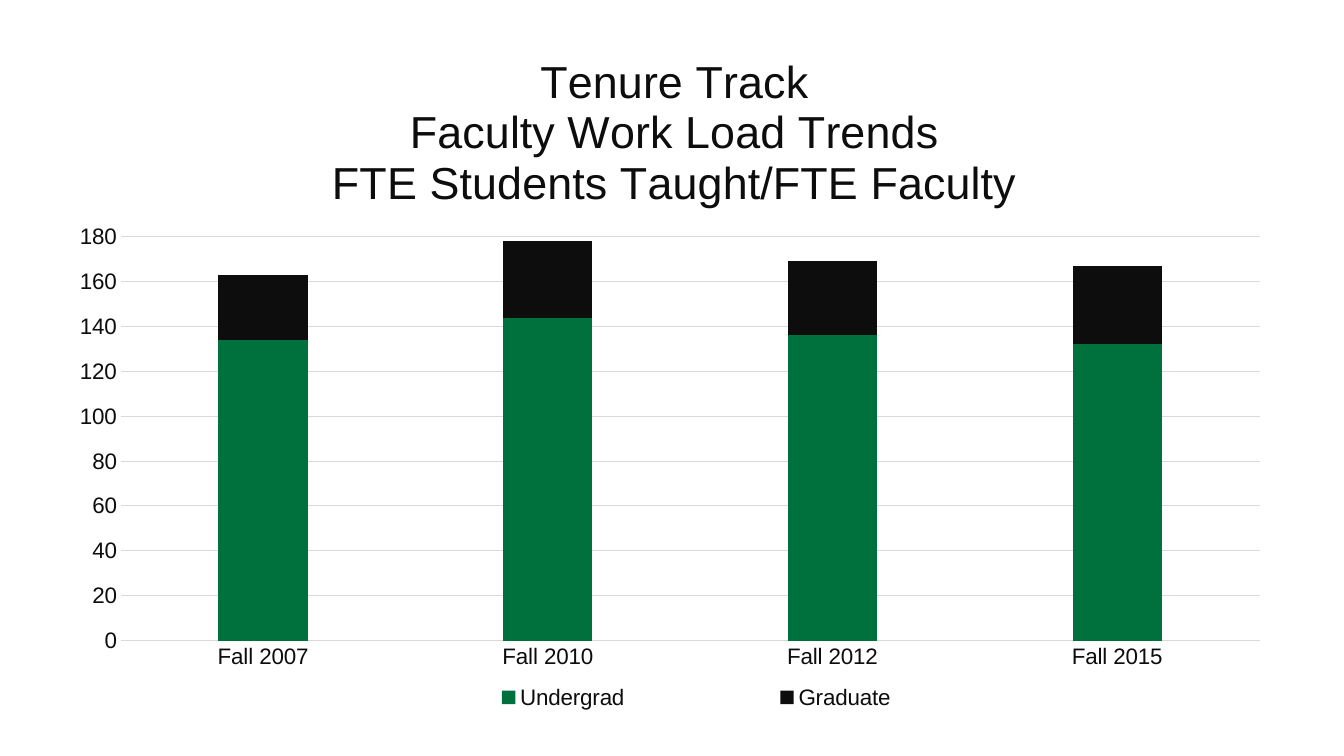
import pptx
import pptx.chart.data
import pptx.dml.color
import pptx.enum.chart
import pptx.oxml
import pptx.oxml.ns
import pptx.util

Cm = pptx.util.Cm
Pt = pptx.util.Pt
RGBColor = pptx.dml.color.RGBColor
qn = pptx.oxml.ns.qn

INK = RGBColor(0x0D, 0x0D, 0x0D)
GREEN = RGBColor(0x00, 0x70, 0x3C)
GRID = RGBColor(0xD9, 0xD9, 0xD9)

TITLE = ["Tenure Track", "Faculty Work Load Trends",
         "FTE Students Taught/FTE Faculty"]
TERMS = ["Fall 2007", "Fall 2010", "Fall 2012", "Fall 2015"]
LOADS = [("Undergrad", (134, 144, 136, 132), GREEN),
         ("Graduate", (29, 34, 33, 35), INK)]


class Deck:
    """Holds the style and the current slide."""
    font = "Arial"
    title_size = Pt(32)
    label_size = Pt(16)
    line_width = Pt(0.75)

    def __init__(self):
        self.prs = pptx.Presentation()
        self.prs.slide_width = Cm(33.87)
        self.prs.slide_height = Cm(19.05)
        self.s = self.prs.slides.add_slide(self.prs.slide_layouts[6])

    def style_font(self, font, size):
        font.name = self.font
        font.size = size
        font.bold = False
        font.color.rgb = INK

    def style_line(self, line):
        line.color.rgb = GRID
        line.width = self.line_width

    def place(self, parent, index, **fractions):
        """Set the manual layout of a chart part, in fractions of the chart."""
        layout = parent.find(qn("c:layout"))
        if layout is not None:
            index = parent.index(layout)
            parent.remove(layout)
        target = '<c:layoutTarget val="inner"/>' if parent.tag == qn("c:plotArea") else ""
        modes = "".join(f'<c:{k}Mode val="edge"/>' for k in "xy")
        values = "".join(f'<c:{k} val="{v}"/>' for k, v in fractions.items())
        parent.insert(index, pptx.oxml.parse_xml(
            f'<c:layout {pptx.oxml.ns.nsdecls("c")}><c:manualLayout>'
            f'{target}{modes}{values}</c:manualLayout></c:layout>'))

    def stacked_chart(self, left, top, width, height, categories, series):
        data = pptx.chart.data.CategoryChartData()
        data.categories = categories
        for name, values, _ in series:
            data.add_series(name, values)
        chart = self.s.shapes.add_chart(
            pptx.enum.chart.XL_CHART_TYPE.COLUMN_STACKED,
            left, top, width, height, data).chart
        self.style_font(chart.font, self.label_size)
        plot = chart.plots[0]
        plot.gap_width = 219
        plot.overlap = 100
        plot.vary_by_categories = False
        for bar, (_, _, color) in zip(plot.series, series):
            bar.format.fill.solid()
            bar.format.fill.fore_color.rgb = color
        self.place(chart.element.find(".//" + qn("c:plotArea")), 0,
                   x=0.05, y=0.31, w=0.93, h=0.57)
        return chart

    def axes(self, chart, maximum, step):
        for axis in (chart.category_axis, chart.value_axis):
            axis.major_tick_mark = pptx.enum.chart.XL_TICK_MARK.NONE
            axis.minor_tick_mark = pptx.enum.chart.XL_TICK_MARK.NONE
            self.style_font(axis.tick_labels.font, self.label_size)
        self.style_line(chart.category_axis.format.line)
        values = chart.value_axis
        values.minimum_scale = 0
        values.maximum_scale = maximum
        values.major_unit = step
        values.format.line.fill.background()
        values.has_major_gridlines = True
        self.style_line(values.major_gridlines.format.line)

    def chart_title(self, chart, lines):
        chart.has_title = True
        tf = chart.chart_title.text_frame
        for i, text in enumerate(lines):
            p = tf.add_paragraph() if i else tf.paragraphs[0]
            self.style_font(p.font, self.title_size)
            r = p.add_run()
            r.text = text
            self.style_font(r.font, self.title_size)
        self.place(chart.chart_title.element, 1, x=0.22, y=0.05)

    def legend(self, chart):
        chart.has_legend = True
        chart.legend.position = pptx.enum.chart.XL_LEGEND_POSITION.BOTTOM
        chart.legend.include_in_layout = False
        self.style_font(chart.legend.font, self.label_size)
        self.place(chart.element.find(".//" + qn("c:legend")), 1,
                   x=0.24, y=0.93, w=0.56, h=0.06)


def main():
    deck = Deck()

    # Stacked columns by term
    chart = deck.stacked_chart(Cm(1.5), Cm(0.43), Cm(30.86), Cm(17.86), TERMS, LOADS)
    deck.axes(chart, 180, 20)

    # Heading and legend
    deck.chart_title(chart, TITLE)
    deck.legend(chart)

    deck.prs.save("out.pptx")


if __name__ == "__main__":
    main()
